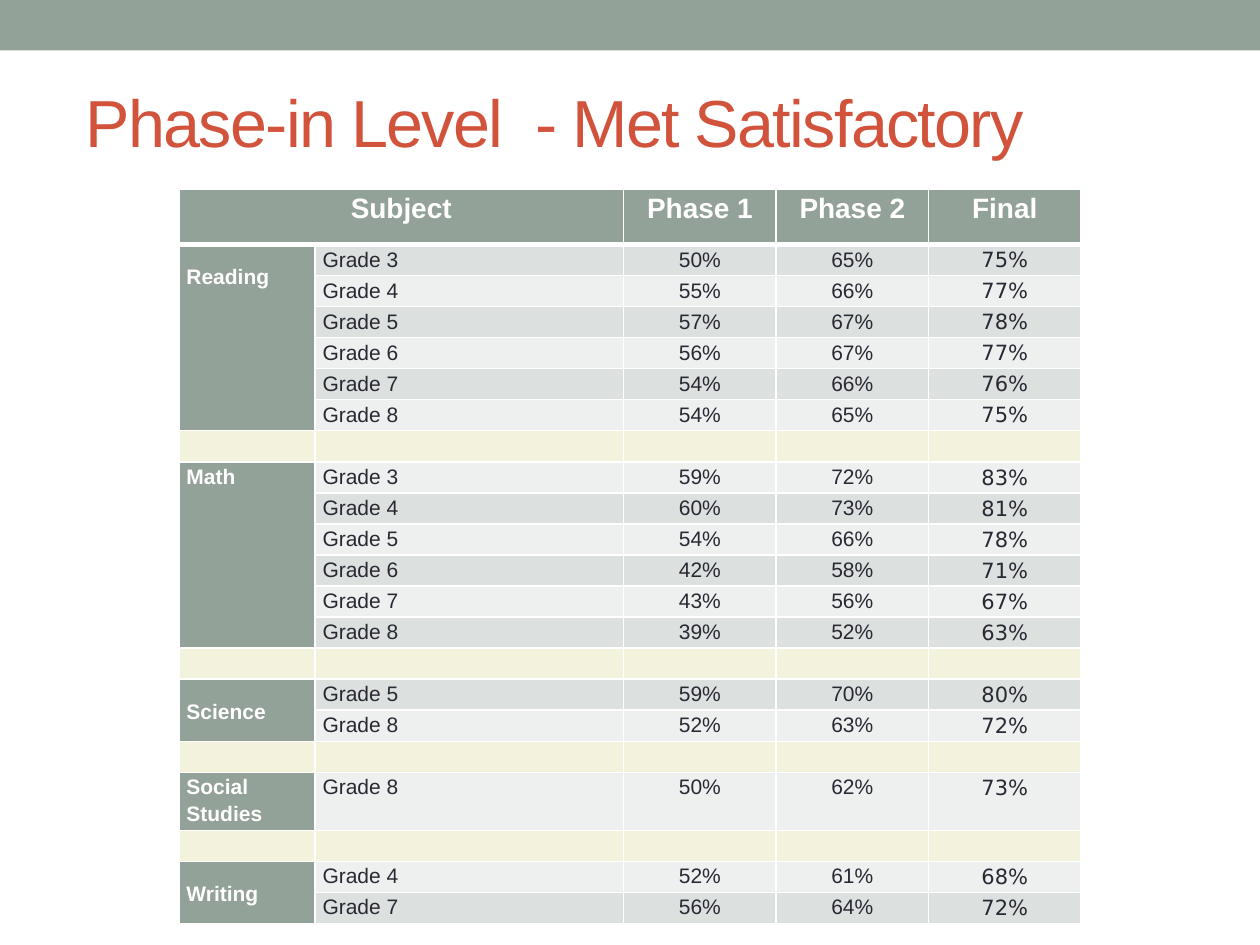
from lxml.etree import SubElement
from pptx import Presentation
from pptx.dml.color import RGBColor
from pptx.enum.shapes import MSO_SHAPE
from pptx.enum.text import MSO_ANCHOR, PP_ALIGN
from pptx.oxml.ns import qn
from pptx.util import Inches, Pt

COLORS = {
    "sage": "93A299", "rust": "D2533C", "ink": "292934", "white": "FFFFFF",
    "dark_band": "DCE0DE", "light_band": "EEF0EF", "spacer": "F3F2DC",
}
HEADERS = ["Subject", "", "Phase 1", "Phase 2", "Final"]
SUBJECTS = [
    ("Reading", 0.14, [(3, 50, 65, 75), (4, 55, 66, 77), (5, 57, 67, 78),
                       (6, 56, 67, 77), (7, 54, 66, 76), (8, 54, 65, 75)]),
    ("Math", 0, [(3, 59, 72, 83), (4, 60, 73, 81), (5, 54, 66, 78),
                 (6, 42, 58, 71), (7, 43, 56, 67), (8, 39, 52, 63)]),
    ("Science", 0.14, [(5, 59, 70, 80), (8, 52, 63, 72)]),
    ("Social Studies", 0, [(8, 50, 62, 73)]),
    ("Writing", 0.14, [(4, 52, 61, 68), (7, 56, 64, 72)]),
]
COLUMN_WIDTHS = [1.08, 2.45, 1.21, 1.21, 1.21]
TABLE_HEIGHT, HEADER_HEIGHT, SOCIAL_HEIGHT = 5.83, 0.44, 0.46


def style_cell(cell, fill, bottom_width=1, top_width=1):
    properties = cell._tc.get_or_add_tcPr()
    widths = {"a:lnL": 1, "a:lnR": 1, "a:lnT": top_width, "a:lnB": bottom_width}
    for tag, width in widths.items():
        line = SubElement(properties, qn(tag), w=str(Pt(width)))
        line_fill = SubElement(line, qn("a:solidFill"))
        SubElement(line_fill, qn("a:srgbClr"), val=COLORS["white"])
    cell.fill.solid()
    cell.fill.fore_color.rgb = RGBColor.from_string(COLORS[fill])
    cell.margin_left = cell.margin_right = Inches(0.06)
    cell.margin_top = cell.margin_bottom = 0
    SubElement(cell.text_frame.paragraphs[0]._p, qn("a:endParaRPr"), sz="900")


def write_text(text_frame, text, size, color, bold=False, centered=False, font="Arial"):
    text_frame.text = text
    paragraph = text_frame.paragraphs[0]
    paragraph.alignment = PP_ALIGN.CENTER if centered else PP_ALIGN.LEFT
    for run in paragraph.runs:
        run.font.name = font
        run.font.size = Pt(size)
        run.font.bold = bold
        run.font.color.rgb = RGBColor.from_string(COLORS[color])
    return paragraph


presentation = Presentation()
presentation.slide_width = Inches(10)
presentation.slide_height = Inches(7.5)
slide = presentation.slides.add_slide(presentation.slide_layouts[5])

top_band = slide.shapes.add_shape(MSO_SHAPE.RECTANGLE, 0, 0, Inches(10), Inches(0.4))
top_band.shadow.inherit = False
top_band.fill.solid()
top_band.fill.fore_color.rgb = RGBColor.from_string(COLORS["sage"])
top_band.line.fill.background()

title = slide.shapes.title
title.left, title.top = Inches(0.58), Inches(0.42)
title.width, title.height = Inches(9), Inches(1.08)
title.text_frame.vertical_anchor = MSO_ANCHOR.MIDDLE
title_paragraph = write_text(title.text_frame, "Phase-in Level  - Met Satisfactory", 38, "rust")
title_paragraph.runs[0].font._element.set("spc", "-100")

row_count = 1 + sum(len(grades) for _, _, grades in SUBJECTS) + len(SUBJECTS) - 1
table = slide.shapes.add_table(
    row_count, len(COLUMN_WIDTHS), Inches(1.42), Inches(1.5),
    Inches(sum(COLUMN_WIDTHS)), Inches(TABLE_HEIGHT)).table
for column, width in zip(table.columns, COLUMN_WIDTHS):
    column.width = Inches(width)
for row in table.rows:
    row.height = Inches((TABLE_HEIGHT - HEADER_HEIGHT - SOCIAL_HEIGHT) / (row_count - 2))
table.rows[0].height = Inches(HEADER_HEIGHT)

for column_index, header in enumerate(HEADERS):
    cell = table.cell(0, column_index)
    style_cell(cell, "sage", bottom_width=3)
    if header:
        paragraph = write_text(cell.text_frame, header, 16, "white", True, True)
        paragraph.line_spacing = 1.15
table.cell(0, 0).merge(table.cell(0, 1))

row_index = 1
for subject, label_offset, grades in SUBJECTS:
    if row_index > 1:
        for column_index in range(len(COLUMN_WIDTHS)):
            style_cell(table.cell(row_index, column_index), "spacer")
        row_index += 1
    first_row = row_index
    for grade, *percentages in grades:
        band = "dark_band" if row_index % 2 else "light_band"
        top_width = 3 if row_index == 1 else 1
        style_cell(table.cell(row_index, 0), "sage", top_width=top_width)
        values = [f"Grade {grade}"] + [f"{value}%" for value in percentages]
        for column_index, value in enumerate(values, start=1):
            cell = table.cell(row_index, column_index)
            style_cell(cell, band, top_width=top_width)
            font = "DejaVu Sans" if column_index == 4 else "Arial"
            paragraph = write_text(cell.text_frame, value, 12, "ink",
                                   centered=column_index > 1, font=font)
            paragraph.line_spacing = 1.15
        row_index += 1
    label = table.cell(first_row, 0)
    label.margin_top = Inches(label_offset)
    write_text(label.text_frame, subject, 12, "white", True).line_spacing = 1.15
    if len(grades) > 1:
        label.merge(table.cell(row_index - 1, 0))
    if subject == "Social Studies":
        table.rows[first_row].height = Inches(SOCIAL_HEIGHT)

presentation.save("out.pptx")
